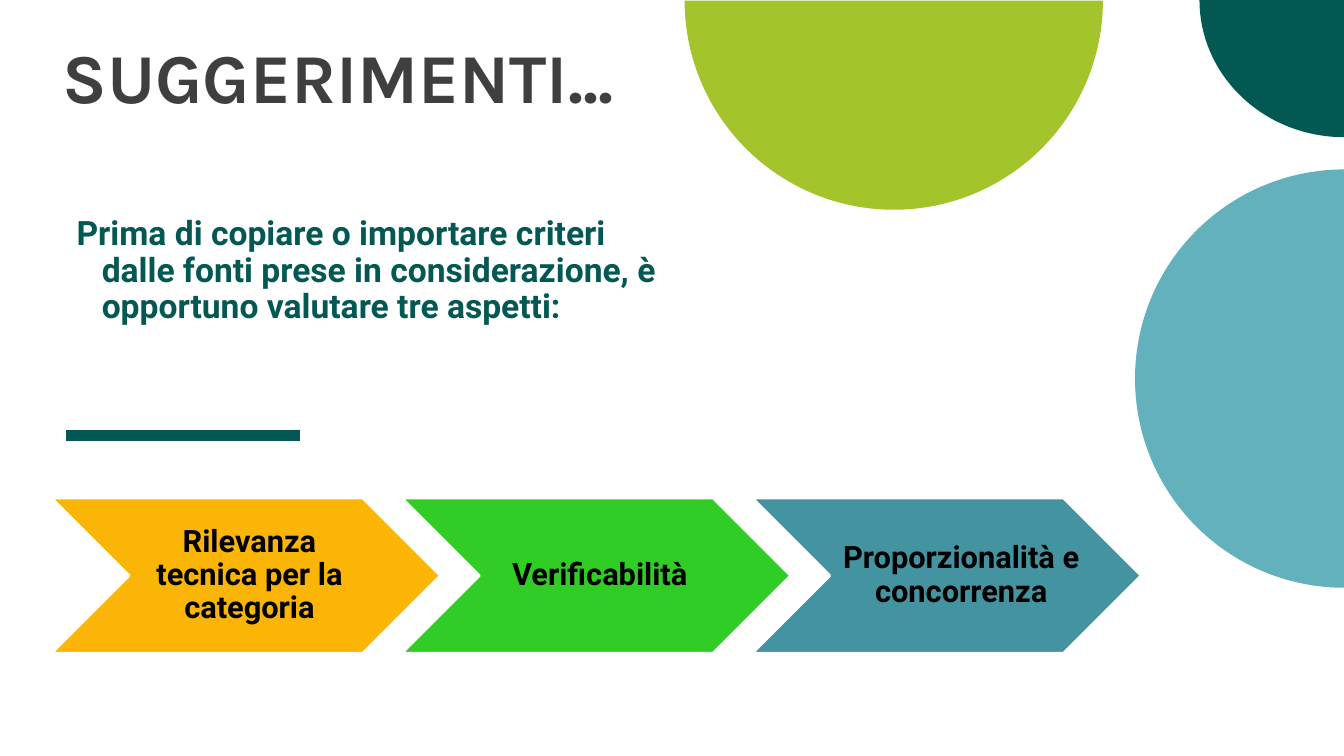
import pptx
import pptx.util
import pptx.dml.color
import pptx.enum.shapes
import pptx.enum.text
import pptx.oxml

Pt = pptx.util.Pt
RGBColor = pptx.dml.color.RGBColor
MSO_SHAPE = pptx.enum.shapes.MSO_SHAPE
MSO_ANCHOR = pptx.enum.text.MSO_ANCHOR
PP_ALIGN = pptx.enum.text.PP_ALIGN

PINE = RGBColor(0x03, 0x58, 0x54)
LIME = RGBColor(0xA3, 0xC4, 0x2A)
AQUA = RGBColor(0x64, 0xB1, 0xBE)
AMBER = RGBColor(0xFA, 0xB5, 0x06)
GREEN = RGBColor(0x32, 0xCC, 0x26)
TEAL = RGBColor(0x43, 0x93, 0xA0)
GREY = RGBColor(0x3F, 0x3F, 0x3F)
BLACK = RGBColor(0, 0, 0)
WHITE = RGBColor(0xFF, 0xFF, 0xFF)

ASPECTS = [
    ("Rilevanza tecnica per la categoria", AMBER, 167),
    ("Verificabilità", GREEN, 167),
    ("Proporzionalità e concorrenza", TEAL, 183),
]
CHEVRON_LEFT, CHEVRON_TOP = 36.7, 355.7
CHEVRON_WIDTH, CHEVRON_HEIGHT = 278, 111
CHEVRON_STEP = 250.2
LABEL_OFFSET = 55.5


def add_filled(slide, kind, left, top, width, height, color):
    sp = slide.shapes.add_shape(kind, Pt(left), Pt(top), Pt(width), Pt(height))
    sp.shadow.inherit = False
    sp.fill.solid()
    sp.fill.fore_color.rgb = color
    return sp


def add_pie(slide, left, top, width, height, color, start, end, rotation=0):
    sp = add_filled(slide, MSO_SHAPE.PIE, left, top, width, height, color)
    sp.line.fill.background()
    sp.adjustments[0] = start * 0.6
    sp.adjustments[1] = end * 0.6
    sp.rotation = rotation


def add_rule(slide, left, right, y):
    line = slide.shapes.add_connector(
        pptx.enum.shapes.MSO_CONNECTOR.STRAIGHT, Pt(left), Pt(y), Pt(right), Pt(y))
    line.line.color.rgb = PINE
    line.line.width = Pt(8)
    pptx.oxml.ns.qn("a:effectLst")
    line._element.spPr.append(pptx.oxml.parse_xml(
        '<a:effectLst xmlns:a="http://schemas.openxmlformats.org/drawingml/2006/main"/>'))


def write(sp, text, size, font, color, spacing, anchor, align, insets=(0, 0, 0, 0)):
    tf = sp.text_frame
    tf.word_wrap = True
    tf.auto_size = pptx.enum.text.MSO_AUTO_SIZE.NONE
    tf.vertical_anchor = anchor
    tf.margin_left, tf.margin_top, tf.margin_right, tf.margin_bottom = map(Pt, insets)
    p = tf.paragraphs[0]
    p.text = text
    p.alignment = align
    p.line_spacing = spacing
    p.space_before = Pt(0)
    p.font.size = Pt(size)
    p.font.name = font
    p.font.bold = True
    p.font.color.rgb = color
    return p


def add_title(slide, text):
    sp = slide.shapes.title
    sp.left, sp.top, sp.width, sp.height = Pt(44.6), Pt(-83.5), Pt(443), Pt(167)
    write(sp, text, 50, "Karla", GREY, 0.8, MSO_ANCHOR.BOTTOM, PP_ALIGN.LEFT)


def add_text(slide, left, top, width, height, text, size, color, anchor, align,
             insets=(0, 0, 0, 0)):
    sp = slide.shapes.add_textbox(Pt(left), Pt(top), Pt(width), Pt(height))
    return write(sp, text, size, "Roboto", color, 0.9, anchor, align, insets)


def add_aspect(slide, index, text, color, label_width):
    left = CHEVRON_LEFT + index * CHEVRON_STEP
    sp = add_filled(slide, MSO_SHAPE.CHEVRON, left, CHEVRON_TOP,
                    CHEVRON_WIDTH, CHEVRON_HEIGHT, color)
    sp.line.color.rgb = WHITE
    sp.line.width = Pt(2)
    add_text(slide, left + LABEL_OFFSET, CHEVRON_TOP, label_width, CHEVRON_HEIGHT,
             text, 22, BLACK, MSO_ANCHOR.MIDDLE, PP_ALIGN.CENTER, (7, 2, 2, 2))


def main():
    prs = pptx.Presentation()
    prs.slide_width, prs.slide_height = Pt(960), Pt(540)
    slide = prs.slides.add_slide(prs.slide_layouts[5])

    add_rule(slide, 46.8, 214.6, 311)
    add_pie(slide, 856.8, -98, 206.6, 196, PINE, 90, 180)
    add_pie(slide, 489, -149, 298.8, 298.8, LIME, 0, 180)
    add_pie(slide, 810.7, 121, 298.8, 298.8, AQUA, 0, 180, 90)

    add_title(slide, "SUGGERIMENTI...")
    p = add_text(slide, 36.7, 154.8, 432, 129.6,
                 "Prima di copiare o importare criteri dalle fonti prese in "
                 "considerazione, è opportuno valutare tre aspetti:",
                 24, PINE, MSO_ANCHOR.TOP, PP_ALIGN.LEFT)
    pPr = p._p.get_or_add_pPr()
    pPr.set("marL", str(Pt(36)))
    pPr.set("indent", str(Pt(-18)))

    for index, (text, color, label_width) in enumerate(ASPECTS):
        add_aspect(slide, index, text, color, label_width)

    prs.save("out.pptx")


if __name__ == "__main__":
    main()
